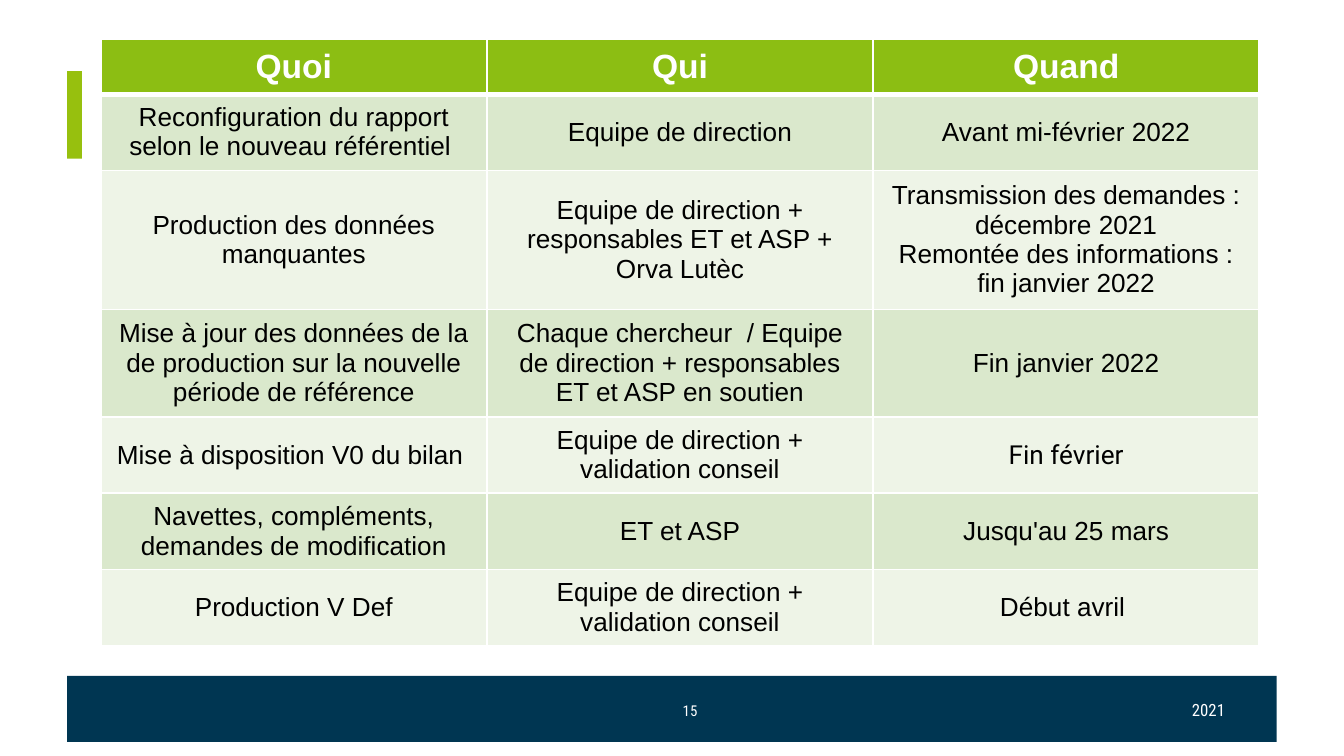
from pptx import Presentation
from pptx.dml.color import RGBColor
from pptx.enum.shapes import MSO_SHAPE as Shape
from pptx.enum.text import MSO_ANCHOR as Anchor, PP_ALIGN as Align
from pptx.oxml import parse_xml
from pptx.oxml.ns import nsdecls
from pptx.util import Inches, Pt

WHITE = "FFFFFF"
HEAD = dict(name="Arial", size=Pt(18), bold=True, color=WHITE)
BODY = dict(name="Arial", size=Pt(14), bold=False, color="000000")
FOOT = dict(name="Roboto Condensed", color=WHITE)

# One row per task: what, who, when
ROWS = [
    ("Quoi", "Qui", "Quand"),
    ("Reconfiguration du rapport selon le nouveau référentiel ",
     "Equipe de direction", "Avant mi-février 2022"),
    ("Production des données manquantes",
     "Equipe de direction + responsables ET et ASP + Orva Lutèc",
     "Transmission des demandes : décembre 2021\n"
     "Remontée des informations : fin janvier 2022"),
    ("Mise à jour des données de la de production sur la nouvelle "
     "période de référence",
     "Chaque chercheur  / Equipe de direction + responsables ET et ASP "
     "en soutien",
     "Fin janvier 2022"),
    ("Mise à disposition V0 du bilan ",
     "Equipe de direction + validation conseil", "Fin février"),
    ("Navettes, compléments, demandes de modification",
     "ET et ASP", "Jusqu'au 25 mars"),
    ("Production V Def",
     "Equipe de direction + validation conseil", "Début avril "),
]


def rgb(code):
    return RGBColor.from_string(code)


def style(font, form):
    for key, value in form.items():
        if key == "color":
            font.color.rgb = rgb(value)
        else:
            setattr(font, key, value)


def write(frame, text, form, align):
    frame.text = text
    for para in frame.paragraphs:
        para.alignment = align
        for run in para.runs:
            style(run.font, form)


def add_bar(slide, box, color):
    bar = slide.shapes.add_shape(Shape.RECTANGLE, *map(Inches, box))
    bar.shadow.inherit = False
    bar.fill.solid()
    bar.fill.fore_color.rgb = rgb(color)
    bar.line.fill.background()


def add_label(slide, box, text, size, align, anchor):
    frame = slide.shapes.add_textbox(*map(Inches, box)).text_frame
    frame.word_wrap = True
    frame.vertical_anchor = anchor
    write(frame, text, FOOT | {"size": Pt(size)}, align)


def add_edges(cell, widths):
    props = cell._tc.get_or_add_tcPr()
    for side, width in widths.items():
        props.append(parse_xml(
            f'<a:ln{side} {nsdecls("a")} w="{Pt(width)}"><a:solidFill>'
            f'<a:srgbClr val="{WHITE}"/></a:solidFill></a:ln{side}>'))


def add_plan(slide, box):
    shape = slide.shapes.add_table(len(ROWS), 3, *map(Inches, box))
    table = shape.table
    for col in table.columns:
        col.width = Inches(box[2] / 3)
    for i, texts in enumerate(ROWS):
        table.rows[i].height = Inches(0.41)  # grows with its text
        fill = "8CBE13" if i == 0 else ("EEF4E7", "DAE8CC")[i % 2]
        for j, text in enumerate(texts):
            cell = table.cell(i, j)
            cell.vertical_anchor = Anchor.MIDDLE
            # Thick rule under the header
            add_edges(cell, {"L": 1, "R": 1, "T": 3 if i == 1 else 1,
                             "B": 3 if i == 0 else 1})
            cell.fill.solid()
            cell.fill.fore_color.rgb = rgb(fill)
            form = BODY if i else HEAD
            if text == "Fin février":
                form = form | {"name": "Roboto"}
            write(cell.text_frame, text, form, Align.CENTER)


def add_footer(slide, box):
    left, top, width, height = box
    add_bar(slide, box, "003652")
    add_label(slide, (left + 4.27, top + 0.11, 0.73, 0.3), "15", 8,
              Align.CENTER, Anchor.MIDDLE)
    add_label(slide, (left + 8.27, top + 0.13, 1.62, 0.3), "2021", 9,
              Align.LEFT, Anchor.TOP)


def main():
    deck = Presentation()
    deck.slide_width = Inches(10)
    deck.slide_height = Inches(10 * 9 / 16)
    slide = deck.slides.add_slide(deck.slide_layouts[6])
    add_footer(slide, (0.5, 5.03, 9, 0.49))
    # Accent beside the table
    add_bar(slide, (0.5, 0.53, 0.11, 0.65), "97C00E")
    add_plan(slide, (0.75, 0.29, 8.62, 4.27))
    deck.save("out.pptx")


if __name__ == "__main__":
    main()
